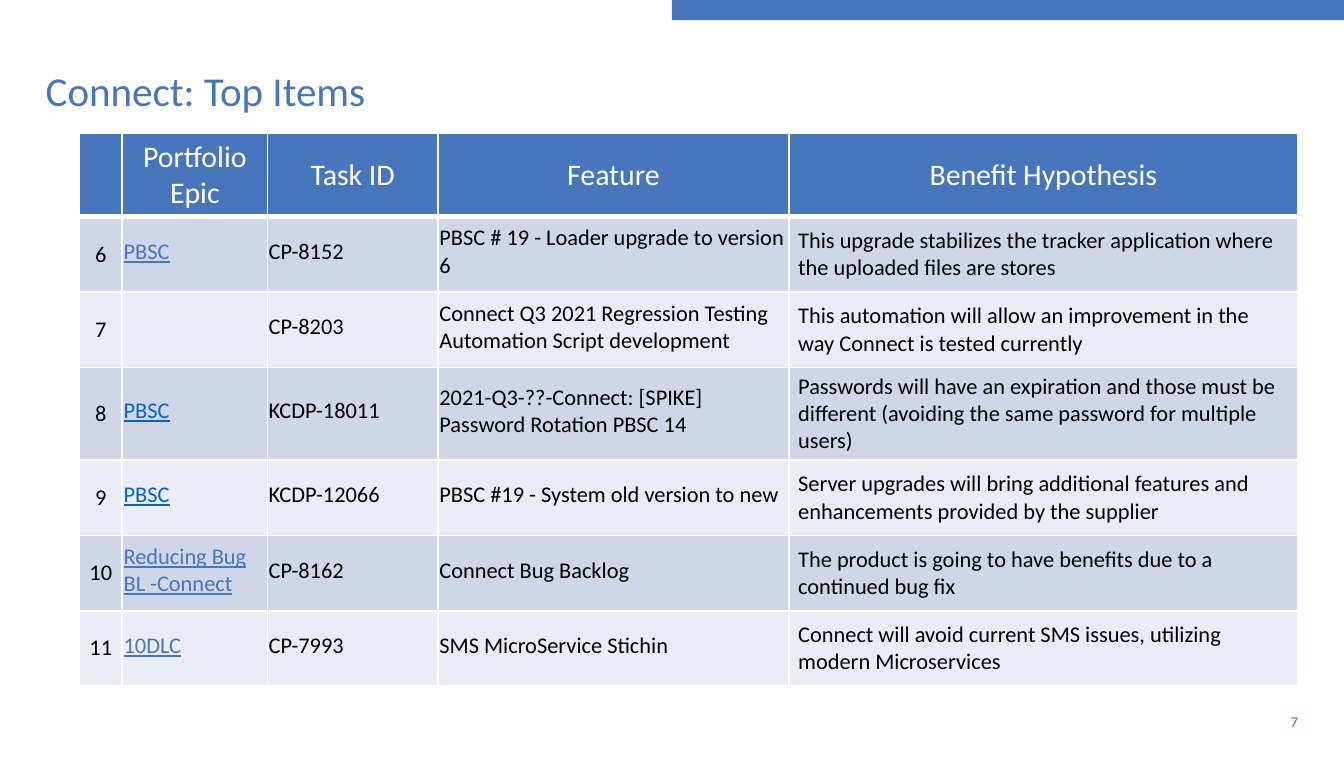
from lxml.etree import SubElement
from pptx import Presentation
from pptx.dml.color import RGBColor
from pptx.enum.shapes import MSO_SHAPE
from pptx.enum.text import MSO_ANCHOR as ANCHOR, MSO_AUTO_SIZE, PP_ALIGN as ALIGN
from pptx.oxml.ns import qn
from pptx.util import Inches, Pt

FONT = "Calibri"
COLORS = {
    "accent": "4776BD",
    "link": "0563C1",
    "odd": "CFD6E8",
    "even": "E9ECF4",
    "text": "000000",
    "white": "FFFFFF",
}
COL_WIDTHS = [0.32, 1.08, 1.27, 2.61, 3.79]
HEADER_HEIGHT, ROW_HEIGHT = 0.59, 0.56
WIDE_INSETS = (0.07, 0.04, 0.07, 0.04)
TIGHT_INSETS = (0.01, 0.01, 0.01, 0.05)
HEADERS = ["", "Portfolio Epic", "Task ID", "Feature", "Benefit Hypothesis"]
EPIC_COL = 1
ITEMS = [
    ("6", "PBSC", "CP-8152", "PBSC # 19 - Loader upgrade to version 6",
     "This upgrade stabilizes the tracker application where the uploaded files are stores"),
    ("7", "", "CP-8203", "Connect Q3 2021 Regression Testing Automation Script development",
     "This automation will allow an improvement in the way Connect is tested currently"),
    ("8", "PBSC", "KCDP-18011", "2021-Q3-??-Connect: [SPIKE] Password Rotation PBSC 14",
     "Passwords will have an expiration and those must be different "
     "(avoiding the same password for multiple users)"),
    ("9", "PBSC", "KCDP-12066", "PBSC #19 - System old version to new",
     "Server upgrades will bring additional features and enhancements provided by the supplier"),
    ("10", "Reducing Bug BL -Connect", "CP-8162", "Connect Bug Backlog",
     "The product is going to have benefits due to a continued bug fix"),
    ("11", "10DLC", "CP-7993", "SMS MicroService Stichin",
     "Connect will avoid current SMS issues, utilizing modern Microservices"),
]
LINK_ITEMS = {"8", "9"}


def rgb(name):
    return RGBColor.from_string(COLORS[name])


def add_run(p, text, size, color, underline=None):
    r = p.add_run()
    r.text = text
    r.font.name = FONT
    r.font.size = Pt(size)
    r.font.color.rgb = rgb(color)
    r.font.underline = underline


def set_frame(tf, anchor):
    tf.margin_left = tf.margin_top = tf.margin_right = tf.margin_bottom = 0
    tf.vertical_anchor = anchor
    tf.word_wrap = True
    tf.auto_size = MSO_AUTO_SIZE.NONE


def add_top_bar(s):
    sp = s.shapes.add_shape(MSO_SHAPE.RECTANGLE, Inches(5), 0, Inches(5), Inches(0.15))
    sp.shadow.inherit = False
    sp.fill.solid()
    sp.fill.fore_color.rgb = rgb("accent")
    sp.line.fill.background()


def add_title(s, text):
    sp = s.shapes.title
    sp.left, sp.top, sp.width, sp.height = map(Inches, (0.34, 0.23, 9.32, 0.63))
    set_frame(sp.text_frame, ANCHOR.BOTTOM)
    p = sp.text_frame.paragraphs[0]
    p.alignment = ALIGN.LEFT
    p.line_spacing = 0.9
    add_run(p, text, 22, "accent")


def add_page_number(s, text):
    sp = s.shapes.add_textbox(*map(Inches, (8.66, 5.22, 1, 0.3)))
    set_frame(sp.text_frame, ANCHOR.MIDDLE)
    p = sp.text_frame.paragraphs[0]
    p.alignment = ALIGN.RIGHT
    add_run(p, text, 8, "accent")


def set_borders(cell, top, bottom):
    """Draw white borders; the side lines are always 1 pt."""
    tc_pr = cell._tc.get_or_add_tcPr()
    widths = {"a:lnL": 1, "a:lnR": 1, "a:lnT": top, "a:lnB": bottom}
    for i, (tag, width) in enumerate(widths.items()):
        ln = tc_pr.makeelement(qn(tag), {"w": str(Pt(width))})
        fill = SubElement(ln, qn("a:solidFill"))
        SubElement(fill, qn("a:srgbClr"), val=COLORS["white"])
        tc_pr.insert(i, ln)


def style_cell(cell, fill, insets, align):
    cell.fill.solid()
    cell.fill.fore_color.rgb = rgb(fill)
    cell.vertical_anchor = ANCHOR.MIDDLE
    (cell.margin_left, cell.margin_top,
     cell.margin_right, cell.margin_bottom) = map(Inches, insets)
    cell.text_frame.paragraphs[0].alignment = align


def fill_header(table):
    for cell, text in zip(table.rows[0].cells, HEADERS):
        style_cell(cell, "accent", WIDE_INSETS, ALIGN.CENTER)
        set_borders(cell, top=1, bottom=3)
        if text:
            add_run(cell.text_frame.paragraphs[0], text, 16, "white")


def fill_item(table, row, item):
    for col, text in enumerate(item):
        cell = table.cell(row, col)
        insets = WIDE_INSETS if col in (0, len(item) - 1) else TIGHT_INSETS
        align = ALIGN.CENTER if col == 0 else ALIGN.LEFT
        style_cell(cell, "odd" if row % 2 else "even", insets, align)
        set_borders(cell, top=3 if row == 1 else 1, bottom=1)
        is_epic = col == EPIC_COL
        color = "text"
        if is_epic:
            color = "link" if item[0] in LINK_ITEMS else "accent"
        if text:
            add_run(cell.text_frame.paragraphs[0], text, 12, color, is_epic or None)


def add_items_table(s):
    height = HEADER_HEIGHT + ROW_HEIGHT * len(ITEMS)
    frame = s.shapes.add_table(len(ITEMS) + 1, len(HEADERS), Inches(0.59), Inches(0.99),
                               Inches(sum(COL_WIDTHS)), Inches(height))
    table = frame.table
    for column, width in zip(table.columns, COL_WIDTHS):
        column.width = Inches(width)
    for row in table.rows:
        row.height = Inches(ROW_HEIGHT)
    table.rows[0].height = Inches(HEADER_HEIGHT)
    fill_header(table)
    for row, item in enumerate(ITEMS, start=1):
        fill_item(table, row, item)


def main():
    prs = Presentation()
    prs.slide_width, prs.slide_height = Inches(10), Inches(5.63)
    s = prs.slides.add_slide(prs.slide_layouts[5])
    add_page_number(s, "7")
    add_top_bar(s)
    add_title(s, "Connect: Top Items")
    add_items_table(s)
    prs.save("out.pptx")


if __name__ == "__main__":
    main()
